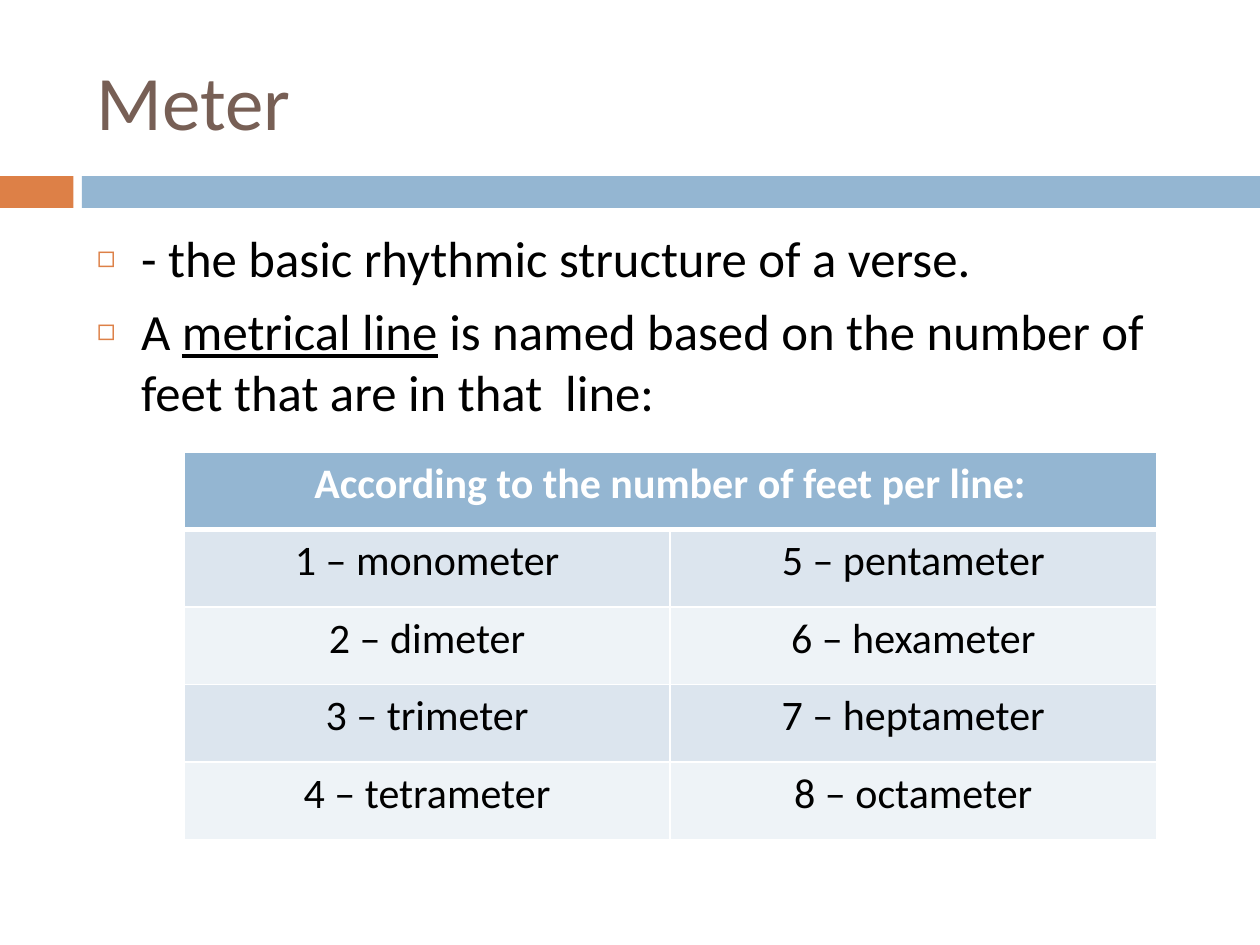
import pptx
import pptx.dml.color
import pptx.enum.shapes
import pptx.enum.text
import pptx.oxml
import pptx.oxml.ns
import pptx.util
from pptx.util import Cm
from dataclasses import dataclass


# Content: each bullet is a list of (text, underlined) pieces
TITLE = "Meter"
BULLETS = [
    [("- the basic rhythmic structure of a verse.", False)],
    [("A ", False), ("metrical line", True),
     (" is named based on the number of feet that are in that  line:", False)],
]
TABLE_HEADING = "According to the number of feet per line:"
METERS = ["monometer", "dimeter", "trimeter", "tetrameter",
          "pentameter", "hexameter", "heptameter", "octameter"]


@dataclass(frozen=True)
class Theme:
    font: str = "Calibri"
    title_size: int = 44
    body_size: int = 29
    table_size: int = 24
    title: str = "775F55"
    text: str = "000000"
    white: str = "FFFFFF"
    orange: str = "DD8047"
    blue: str = "94B6D2"
    bands: tuple = ("DCE5EE", "EEF3F7")


THEME = Theme()
ALIGN = pptx.enum.text.PP_ALIGN
ANCHOR = pptx.enum.text.MSO_ANCHOR

# Layout in centimetres
LEFT, WIDTH = 1.7, 22.66
PAGE_WIDTH, PAGE_HEIGHT = 25.4, 19.05
BAR_TOP, BAR_HEIGHT = 3.55, 0.64
ORANGE_WIDTH, BLUE_LEFT = 1.48, 1.65
TABLE_LEFT, TABLE_TOP = 3.71, 9.12
COLUMN_WIDTH, ROW_HEIGHT = 9.8, 1.56
ROWS_PER_COLUMN = len(METERS) // 2


def color(value):
    return pptx.dml.color.RGBColor.from_string(value)


def add_text(para, text, size, fill, bold=False, underline=False, align=ALIGN.LEFT):
    para.alignment = align
    span = para.add_run()
    span.text = text
    font = span.font
    font.name, font.size = THEME.font, pptx.util.Pt(size)
    font.bold, font.underline = bold, underline
    font.color.rgb = color(fill)


def place(box, left, top, width, height, anchor):
    box.left, box.top, box.width, box.height = map(Cm, (left, top, width, height))
    frame = box.text_frame
    frame.word_wrap = True
    frame.auto_size = pptx.enum.text.MSO_AUTO_SIZE.NONE
    frame.vertical_anchor = anchor
    return frame


def add_bar(page, left, width, fill):
    bar = page.shapes.add_shape(pptx.enum.shapes.MSO_SHAPE.RECTANGLE,
                                Cm(left), Cm(BAR_TOP), Cm(width), Cm(BAR_HEIGHT))
    bar.shadow.inherit = False
    bar.fill.solid()
    bar.fill.fore_color.rgb = color(fill)
    bar.line.fill.background()


def set_bullet(para):
    properties = para._p.get_or_add_pPr()
    indent = Cm(0.89)
    properties.set("marL", str(indent))
    properties.set("indent", str(-indent))
    namespace = pptx.oxml.ns.nsdecls("a")
    for xml in (f'<a:buClr {namespace}><a:srgbClr val="{THEME.orange}"/></a:buClr>',
                f'<a:buSzPct {namespace} val="60000"/>',
                f'<a:buChar {namespace} char="◻"/>'):
        properties.append(pptx.oxml.parse_xml(xml))


def style_cell(cell, fill, top=1, bottom=1):
    properties = cell._tc.get_or_add_tcPr()
    for side, points in (("L", 1), ("R", 1), ("T", top), ("B", bottom)):
        properties.append(pptx.oxml.parse_xml(
            f'<a:ln{side} {pptx.oxml.ns.nsdecls("a")} w="{pptx.util.Pt(points)}">'
            f'<a:solidFill><a:srgbClr val="{THEME.white}"/></a:solidFill></a:ln{side}>'))
    cell.fill.solid()
    cell.fill.fore_color.rgb = color(fill)


def add_meter_table(page):
    table = page.shapes.add_table(
        ROWS_PER_COLUMN + 1, 2, Cm(TABLE_LEFT), Cm(TABLE_TOP),
        Cm(2 * COLUMN_WIDTH), Cm((ROWS_PER_COLUMN + 1) * ROW_HEIGHT)).table
    for column in table.columns:
        column.width = Cm(COLUMN_WIDTH)
    for row in table.rows:
        row.height = Cm(ROW_HEIGHT)

    # Heading across both columns
    heading = table.cell(0, 0)
    heading.merge(table.cell(0, 1))
    for column in range(2):
        style_cell(table.cell(0, column), THEME.blue, bottom=3)
    add_text(heading.text_frame.paragraphs[0], TABLE_HEADING, THEME.table_size,
             THEME.white, bold=True, align=ALIGN.CENTER)

    # Meters run down the first column, then the second
    for index, name in enumerate(METERS):
        column, row = divmod(index, ROWS_PER_COLUMN)
        cell = table.cell(row + 1, column)
        style_cell(cell, THEME.bands[row % 2], top=1 if row else 3)
        add_text(cell.text_frame.paragraphs[0], f"{index + 1} – {name}",
                 THEME.table_size, THEME.text, align=ALIGN.CENTER)


def main():
    deck = pptx.Presentation()
    deck.slide_width, deck.slide_height = Cm(PAGE_WIDTH), Cm(PAGE_HEIGHT)
    page = deck.slides.add_slide(deck.slide_layouts[1])

    # Divider bars
    add_bar(page, 0, ORANGE_WIDTH, THEME.orange)
    add_bar(page, BLUE_LEFT, PAGE_WIDTH - BLUE_LEFT, THEME.blue)

    # Title
    frame = place(page.shapes.title, LEFT, 0.64, WIDTH, 2.74, ANCHOR.MIDDLE)
    add_text(frame.paragraphs[0], TITLE, THEME.title_size, THEME.title)

    # Bullets
    frame = place(page.placeholders[1], LEFT, 4.45, WIDTH, 12.5, ANCHOR.TOP)
    for index, pieces in enumerate(BULLETS):
        para = frame.add_paragraph() if index else frame.paragraphs[0]
        para.space_before = pptx.util.Pt(7)
        set_bullet(para)
        for text, underline in pieces:
            add_text(para, text, THEME.body_size, THEME.text, underline=underline)

    add_meter_table(page)
    deck.save("out.pptx")


if __name__ == "__main__":
    main()
